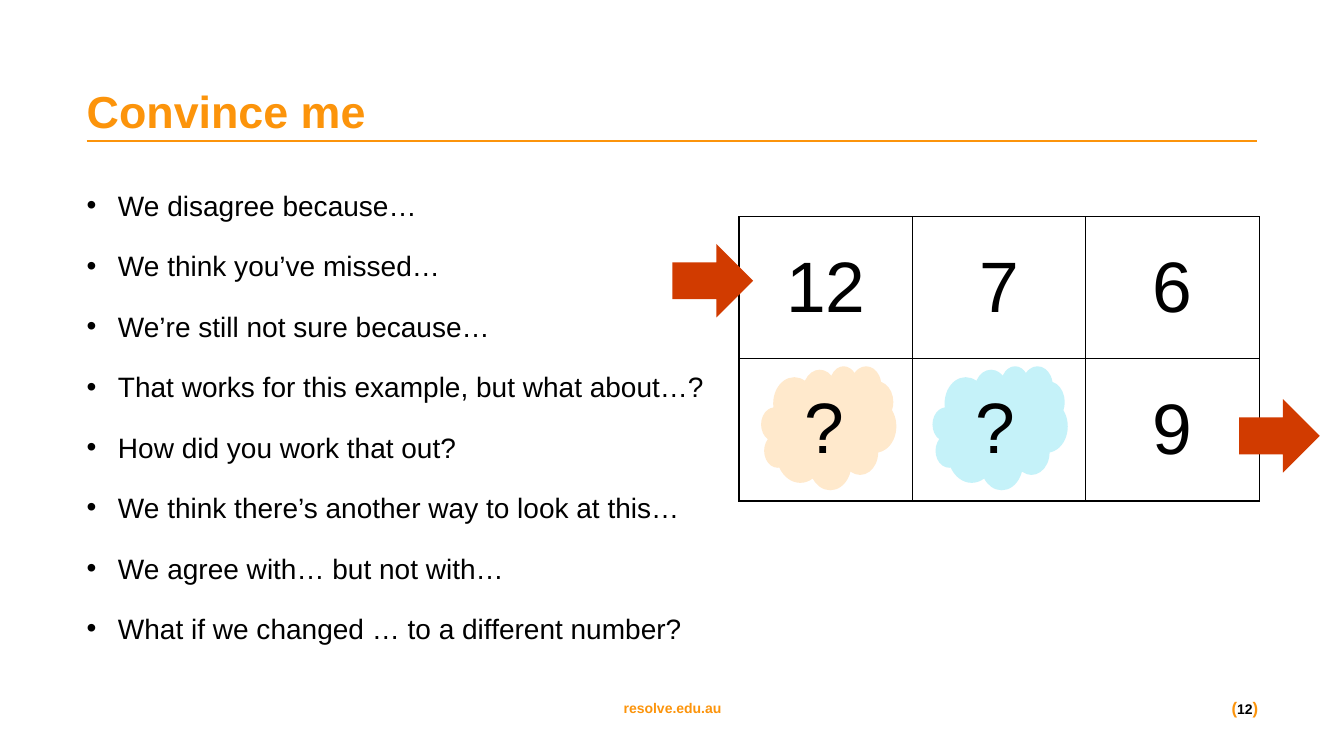
import dataclasses

import lxml.etree
import pptx
import pptx.dml.color
import pptx.enum.shapes
import pptx.enum.text
import pptx.oxml.ns
import pptx.util

Inches = pptx.util.Inches
Pt = pptx.util.Pt
RGB = pptx.dml.color.RGBColor.from_string
Shape = pptx.enum.shapes.MSO_SHAPE
Align = pptx.enum.text.PP_ALIGN
Anchor = pptx.enum.text.MSO_ANCHOR
qn = pptx.oxml.ns.qn


@dataclasses.dataclass(frozen=True)
class Theme:
    face: str = "Arial"
    ink: str = "000000"
    brand: str = "FC940B"
    arrow: str = "D13B00"
    peach: str = "FFE9CC"
    aqua: str = "C5F2F9"
    title: int = 32
    body: int = 20
    digit: int = 51
    note: int = 10
    mark: int = 12


THEME = Theme()
PROMPTS = [
    "We disagree because…",
    "We think you’ve missed…",
    "We’re still not sure because…",
    "That works for this example, but what about…?",
    "How did you work that out?",
    "We think there’s another way to look at this…",
    "We agree with… but not with…",
    "What if we changed … to a different number?",
]
ROWS = [["12", "7", "6"], ["", "", "9"]]


def style(font, size, color, bold=False):
    font.name = THEME.face
    font.size = Pt(size)
    font.bold = bold
    font.color.rgb = RGB(color)


def frame(shape, anchor):
    text = shape.text_frame
    text.word_wrap = True
    text.auto_size = pptx.enum.text.MSO_AUTO_SIZE.NONE
    text.vertical_anchor = anchor
    text.margin_left = text.margin_right = 0
    text.margin_top = text.margin_bottom = 0
    return text


def place(shape, box):
    shape.left, shape.top, shape.width, shape.height = map(Inches, box)


def add_head(slide, box):
    left, top, width, height = box
    # Title
    title = slide.shapes.title
    place(title, box)
    text = frame(title, Anchor.BOTTOM)
    text.text = "Convince me"
    para = text.paragraphs[0]
    para.alignment = Align.LEFT
    style(para.font, THEME.title, THEME.brand, True)
    # Rule under the title
    y = Inches(top + height + 0.04)
    rule = slide.shapes.add_connector(
        pptx.enum.shapes.MSO_CONNECTOR.STRAIGHT,
        Inches(left), y, Inches(left + width), y)
    rule.line.color.rgb = RGB(THEME.brand)
    rule.line.width = Pt(1.5)
    props = rule._element.find(qn("p:spPr"))
    lxml.etree.SubElement(props, qn("a:effectLst"))


def add_list(slide, box):
    body = slide.placeholders[1]
    place(body, box)
    text = frame(body, Anchor.TOP)
    text.text = "\n".join(PROMPTS)
    for para in text.paragraphs:
        props = para._p.get_or_add_pPr()
        props.set("marL", str(Inches(0.31)))
        props.set("indent", str(-Inches(0.31)))
        para.line_spacing = 1.05
        para.space_before = Pt(0)
        para.space_after = Pt(18)
        lxml.etree.SubElement(props, qn("a:buChar"), char="•")
        style(para.font, THEME.body, THEME.ink)


def add_foot(slide, box):
    left, top, width, height = box
    # Site name
    site = slide.shapes.add_textbox(*map(Inches, (left, top, 4.62, height)))
    text = frame(site, Anchor.MIDDLE)
    text.text = "resolve.edu.au"
    para = text.paragraphs[0]
    para.alignment = Align.CENTER
    style(para.font, THEME.note, THEME.brand, True)
    # Page number
    page = slide.shapes.add_textbox(
        *map(Inches, (left + width - 0.79, top, 0.79, height)))
    para = frame(page, Anchor.MIDDLE).paragraphs[0]
    para.alignment = Align.RIGHT
    for word, size, color in (("(", THEME.mark, THEME.brand),
                              ("12", THEME.note, THEME.ink),
                              (")", THEME.mark, THEME.brand)):
        run = para.add_run()
        run.text = word
        style(run.font, size, color, True)


def add_edges(cell):
    props = cell._tc.get_or_add_tcPr()
    for spot, side in enumerate(("lnL", "lnR", "lnT", "lnB")):
        line = lxml.etree.Element(qn("a:" + side), w=str(Pt(1)))
        fill = lxml.etree.SubElement(line, qn("a:solidFill"))
        lxml.etree.SubElement(fill, qn("a:srgbClr"), val=THEME.ink)
        props.insert(spot, line)


def add_shape(slide, kind, box, color):
    shape = slide.shapes.add_shape(kind, *map(Inches, box))
    shape.shadow.inherit = False
    shape.fill.solid()
    shape.fill.fore_color.rgb = RGB(color)
    shape.line.fill.background()
    return shape


def add_grid(slide, box):
    left, top, width, height = box
    # Number table
    table = slide.shapes.add_table(2, 3, *map(Inches, box)).table
    table.first_row = table.horz_banding = False
    for row, words in enumerate(ROWS):
        for col, word in enumerate(words):
            cell = table.cell(row, col)
            cell.fill.background()
            add_edges(cell)
            cell.vertical_anchor = Anchor.MIDDLE
            cell.margin_left = cell.margin_right = Inches(0.12)
            cell.margin_top = cell.margin_bottom = Inches(0.06)
            cell.text = word
            para = cell.text_frame.paragraphs[0]
            para.alignment = Align.CENTER
            style(para.font, THEME.digit, THEME.ink)
    # Arrows into and out of the table
    for x, y in ((left - 0.66, top + 0.27), (left + width - 0.2, top + 1.81)):
        add_shape(slide, Shape.RIGHT_ARROW, (x, y, 0.8, 0.73), THEME.arrow)
    # Clouds over the unknown numbers
    for col, color in enumerate((THEME.peach, THEME.aqua)):
        spot = (left + 0.22 + col * 1.7, top + height / 2 + 0.07, 1.34, 1.23)
        cloud = add_shape(slide, Shape.CLOUD, spot, color)
        text = frame(cloud, Anchor.MIDDLE)
        text.text = "?"
        para = text.paragraphs[0]
        para.alignment = Align.CENTER
        style(para.font, THEME.digit, THEME.ink)


def main():
    deck = pptx.Presentation()
    deck.slide_width = Inches(13.33)
    deck.slide_height = Inches(7.5)
    slide = deck.slides.add_slide(deck.slide_layouts[1])
    add_head(slide, (0.86, 0.78, 11.61, 0.58))
    add_list(slide, (0.86, 1.85, 6.39, 4.21))
    add_foot(slide, (4.36, 6.85, 8.12, 0.34))
    add_grid(slide, (7.33, 2.15, 5.16, 2.82))
    deck.save("out.pptx")


if __name__ == "__main__":
    main()
